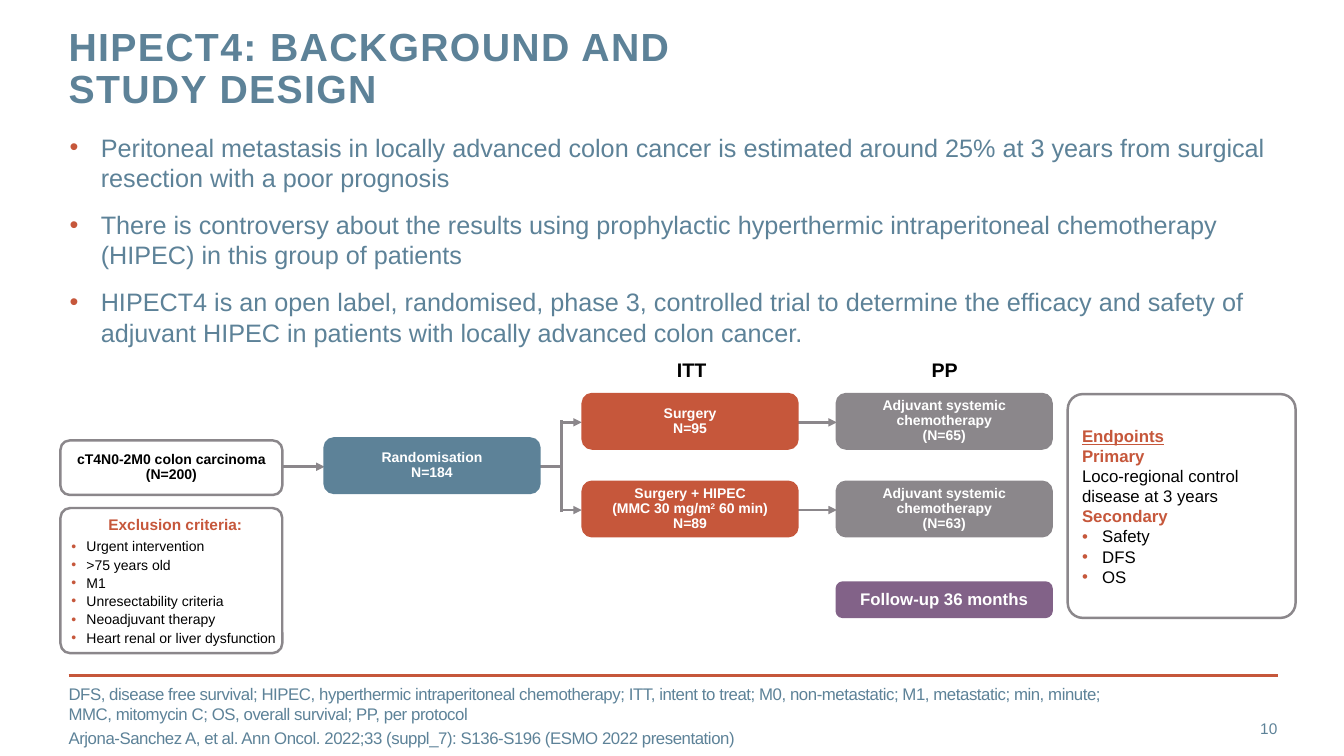
from copy import deepcopy

from lxml.etree import SubElement
from pptx import Presentation
from pptx.dml.color import RGBColor
from pptx.enum.shapes import MSO_CONNECTOR, MSO_SHAPE
from pptx.enum.text import MSO_ANCHOR, MSO_AUTO_SIZE, PP_ALIGN
from pptx.oxml.ns import qn
from pptx.util import Inches, Pt

color = RGBColor.from_string
BLUE, ORANGE, GRAY, PURPLE = "5D8298", "C6573B", "8B878B", "826288"
WHITE, BLACK = "FFFFFF", "000000"


def write(box, text, size=10, fill=BLACK, bold=False, underline=False, align=PP_ALIGN.LEFT,
          before=0, after=0, leading=None, spacing=0, indent=0):
    frame = box.text_frame
    para = frame.add_paragraph() if frame.text else frame.paragraphs[0]
    para.alignment = align
    para.space_before = Pt(before if frame.text else 0)
    para.space_after = Pt(after)
    para.line_spacing = leading
    if indent:
        properties = para._p.get_or_add_pPr()
        properties.set("marL", str(Inches(indent)))
        properties.set("indent", str(-Inches(indent)))
        SubElement(SubElement(properties, qn("a:buClr")), qn("a:srgbClr")).set("val", ORANGE)
        SubElement(properties, qn("a:buFont")).set("typeface", "Arial")
        SubElement(properties, qn("a:buChar")).set("char", "•")
    for part, piece in enumerate(text.split("^")):
        for row, line in enumerate(piece.split("\n")):
            if row:
                para.add_line_break()
            span = para.add_run()
            span.text = line
            span.font.name = "Arial"
            span.font.size = Pt(size)
            span.font.bold = bold
            span.font.underline = underline
            span.font.color.rgb = color(fill)
            if spacing:
                span.font._element.set("spc", str(round(spacing * 100)))
            if part % 2:
                span.font._element.set("baseline", "30000")
    for line_break in para._p.findall(qn("a:br")):
        line_break.append(deepcopy(para.runs[0].font._element))


def add_box(left, top, width, height, fill=None, outline=None, corner=0.169,
            anchor=MSO_ANCHOR.MIDDLE, insets=(0.1, 0.05, 0.1, 0.05)):
    place = [Inches(length) for length in (left, top, width, height)]
    if fill:
        box = page.shapes.add_shape(MSO_SHAPE.ROUNDED_RECTANGLE, *place)
        box.adjustments[0] = corner
        box.shadow.inherit = False
        box.fill.solid()
        box.fill.fore_color.rgb = color(fill)
        box.line.color.rgb = color(outline or fill)
        box.line.width = Pt(1.75)
    else:
        box = page.shapes.add_textbox(*place)
    frame = box.text_frame
    frame.word_wrap = True
    frame.vertical_anchor = anchor
    frame.margin_left, frame.margin_top, frame.margin_right, frame.margin_bottom = map(Inches, insets)
    return box


deck = Presentation()
deck.slide_width, deck.slide_height = Inches(13.33), Inches(7.5)
page = deck.slides.add_slide(deck.slide_layouts[5])

title = page.shapes.title
title.left, title.top, title.width, title.height = map(Inches, (0.68, 0.27, 9.93, 0.88))
frame = title.text_frame
frame.margin_left = frame.margin_top = frame.margin_right = frame.margin_bottom = 0
frame.vertical_anchor = MSO_ANCHOR.TOP
frame.word_wrap = True
frame.auto_size = MSO_AUTO_SIZE.NONE
write(title, "HIPECT4: BACKGROUND AND\nSTUDY DESIGN", size=28, fill=BLUE, bold=True,
      leading=Pt(30), spacing=1)

background = add_box(0.69, 1.31, 11.99, 2.02, anchor=MSO_ANCHOR.TOP, insets=(0, 0, 0, 0))
for point in (
    "Peritoneal metastasis in locally advanced colon cancer is estimated around 25% at 3 years "
    "from surgical resection with a poor prognosis",
    "There is controversy about the results using prophylactic hyperthermic intraperitoneal "
    "chemotherapy (HIPEC) in this group of patients",
    "HIPECT4 is an open label, randomised, phase 3, controlled trial to determine the efficacy "
    "and safety of adjuvant HIPEC in patients with locally advanced colon cancer.",
):
    write(background, point, size=18, fill=BLUE, before=12, indent=0.31)

for start_x, start_y, end_x, end_y, ink, arrow in (
    (0.68, 6.7, 12.68, 6.7, ORANGE, False),
    (2.8, 4.63, 3.22, 4.63, GRAY, True),
    (5.35, 4.63, 5.58, 4.63, GRAY, False),
    (5.57, 5.08, 5.57, 4.17, GRAY, False),
    (5.58, 4.19, 5.77, 4.19, GRAY, True),
    (5.58, 5.06, 5.77, 5.06, GRAY, True),
    (7.91, 4.19, 8.3, 4.19, GRAY, True),
    (7.91, 5.06, 8.3, 5.06, GRAY, True),
):
    link = page.shapes.add_connector(MSO_CONNECTOR.STRAIGHT, Inches(start_x), Inches(start_y),
                                     Inches(end_x), Inches(end_y))
    link.line.color.rgb = color(ink)
    link.line.width = Pt(2)
    if arrow:
        SubElement(link.line._get_or_add_ln(), qn("a:tailEnd")).set("type", "triangle")
    SubElement(link._element.spPr, qn("a:effectLst"))

for left, top, width, height, fill, outline, ink, size, label in (
    (0.6, 4.37, 2.2, 0.54, WHITE, GRAY, BLACK, 10, "cT4N0-2M0 colon carcinoma\n(N=200)"),
    (3.22, 4.35, 2.13, 0.54, BLUE, BLUE, WHITE, 10, "Randomisation\nN=184"),
    (5.78, 3.91, 2.13, 0.54, ORANGE, ORANGE, WHITE, 10, "Surgery\nN=95"),
    (5.78, 4.78, 2.13, 0.54, ORANGE, ORANGE, WHITE, 10,
     "Surgery + HIPEC\n(MMC 30 mg/m^2^ 60 min)\nN=89"),
    (8.3, 3.91, 2.13, 0.54, GRAY, GRAY, WHITE, 10, "Adjuvant systemic chemotherapy\n(N=65)"),
    (8.3, 4.78, 2.13, 0.54, GRAY, GRAY, WHITE, 10, "Adjuvant systemic chemotherapy\n(N=63)"),
    (8.3, 5.78, 2.13, 0.34, PURPLE, PURPLE, WHITE, 12, "Follow-up 36 months"),
):
    step = add_box(left, top, width, height, fill, outline)
    write(step, label, size=size, fill=ink, bold=True, align=PP_ALIGN.CENTER, leading=0.9)

for left, label in ((6.18, "ITT"), (8.69, "PP")):
    heading = add_box(left, 3.51, 1.32, 0.32, anchor=MSO_ANCHOR.TOP, insets=(0.08, 0.04, 0.04, 0.04))
    write(heading, label, size=14, bold=True, align=PP_ALIGN.CENTER)

exclusion = add_box(0.6, 5.04, 2.2, 1.44, WHITE, GRAY, corner=0.067, insets=(0.08, 0.05, 0, 0.05))
write(exclusion, "Exclusion criteria:", size=11, fill=ORANGE, bold=True,
      align=PP_ALIGN.CENTER, after=3)
for criterion in ("Urgent intervention", ">75 years old", "M1", "Unresectability criteria",
                  "Neoadjuvant therapy", "Heart renal or liver dysfunction"):
    write(exclusion, criterion, after=1, indent=0.15)

endpoints = add_box(10.59, 3.91, 2.26, 2.22, WHITE, GRAY, corner=0.067)
write(endpoints, "Endpoints", size=12, fill=ORANGE, bold=True, underline=True)
write(endpoints, "Primary", size=12, fill=ORANGE, bold=True)
write(endpoints, "Loco-regional control disease at 3 years", size=12)
write(endpoints, "Secondary", size=12, fill=ORANGE, bold=True)
for endpoint in ("Safety", "DFS", "OS"):
    write(endpoints, endpoint, size=12, indent=0.2)

footnote = add_box(0.68, 6.9, 10.56, 0.4, insets=(0, 0, 0, 0))
for note in (
    "DFS, disease free survival; HIPEC, hyperthermic intraperitoneal chemotherapy; ITT, intent to "
    "treat; M0, non-metastatic; M1, metastatic; min, minute; MMC, mitomycin C; OS, overall "
    "survival; PP, per protocol",
    "Arjona-Sanchez A, et al. Ann Oncol. 2022;33 (suppl_7): S136-S196 (ESMO 2022 presentation)",
):
    write(footnote, note, size=12, fill=BLUE, before=3, spacing=-0.3)

number = add_box(11.81, 7.03, 0.86, 0.4, insets=(0, 0, 0, 0))
write(number, "10", size=11, fill=BLUE, align=PP_ALIGN.RIGHT)

deck.save("out.pptx")
